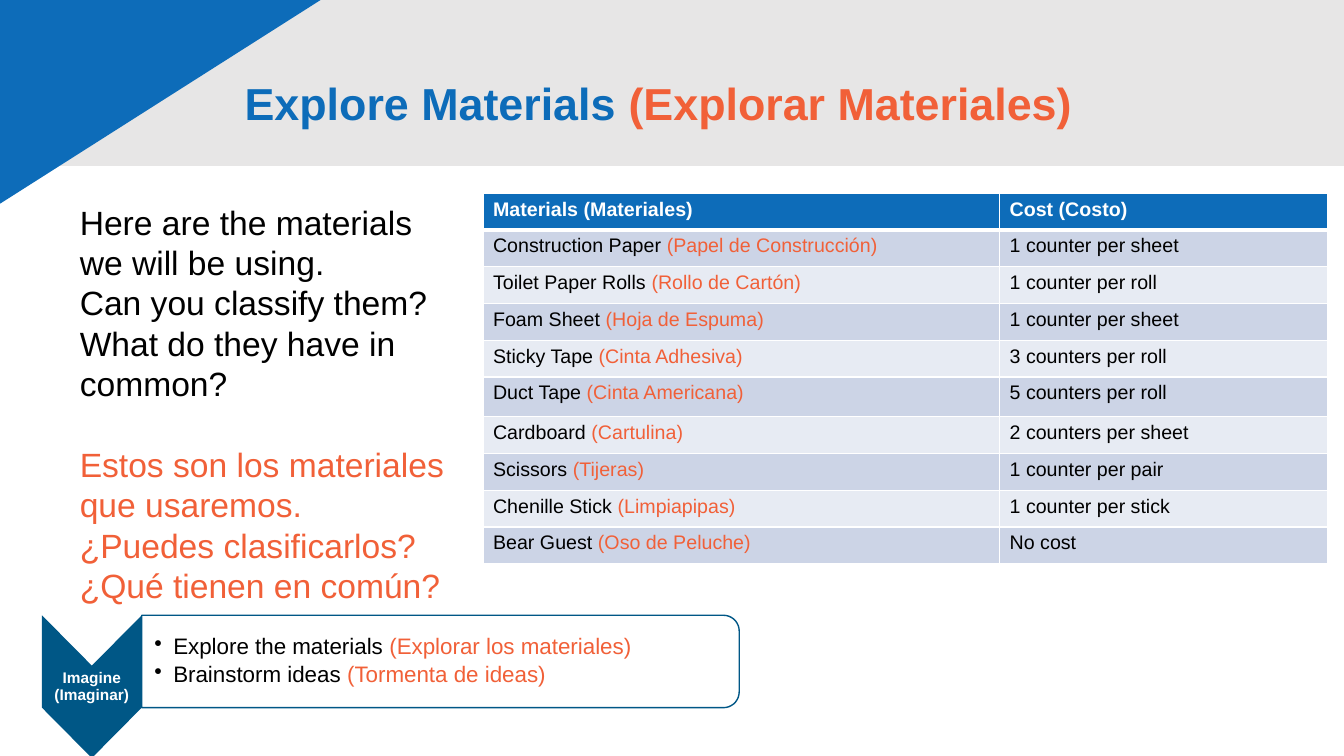
import math

from lxml import etree
from pptx import Presentation
from pptx import util as u
from pptx.dml.color import RGBColor
from pptx.enum import shapes, text
from pptx.oxml import ns

EMU_PER_PX = 9525
FONT = "Arial"
COLOURS = {
    "blue": "0D6CB9",
    "navy": "005786",
    "orange": "F16038",
    "grey": "E7E6E6",
    "odd row": "CCD4E6",
    "even row": "E7EBF3",
    "white": "FFFFFF",
    "black": "000000",
}
MATERIALS = [
    ("Construction Paper", "Papel de Construcción", "1 counter per sheet"),
    ("Toilet Paper Rolls", "Rollo de Cartón", "1 counter per roll"),
    ("Foam Sheet", "Hoja de Espuma", "1 counter per sheet"),
    ("Sticky Tape", "Cinta Adhesiva", "3 counters per roll"),
    ("Duct Tape", "Cinta Americana", "5 counters per roll"),
    ("Cardboard", "Cartulina", "2 counters per sheet"),
    ("Scissors", "Tijeras", "1 counter per pair"),
    ("Chenille Stick", "Limpiapipas", "1 counter per stick"),
    ("Bear Guest", "Oso de Peluche", "No cost"),
]
QUESTIONS = [
    ("Here are the materials we will be using.", "black"),
    ("Can you classify them?", "black"),
    ("What do they have in common?", "black"),
    ("Estos son los materiales que usaremos.", "orange"),
    ("¿Puedes clasificarlos?", "orange"),
    ("¿Qué tienen en común?", "orange"),
]
STEPS = [
    ("Explore the materials", "Explorar los materiales"),
    ("Brainstorm ideas", "Tormenta de ideas"),
]


def px(*lengths):
    return [u.Emu(round(length * EMU_PER_PX)) for length in lengths]


def colour(name):
    return RGBColor.from_string(COLOURS[name])


def write(para, size, *spans, bold=False):
    """Fill a paragraph with (wording, colour name) spans."""
    for wording, name in spans:
        span = para.add_run()
        span.text = wording
        span.font.name = FONT
        span.font.size = u.Pt(size)
        span.font.bold = bold
        span.font.color.rgb = colour(name)


def bilingual(english, spanish, name="black"):
    return (english + " ", name), (f"({spanish})", "orange")


def paint(shape, fill):
    shape.shadow.inherit = False
    shape.fill.solid()
    shape.fill.fore_color.rgb = colour(fill)
    shape.line.fill.background()
    return shape


def add_preset(page, kind, fill, *place):
    return paint(page.shapes.add_shape(kind, *px(*place)), fill)


def add_outline(page, fill, points):
    corners = [px(*point) for point in points]
    builder = page.shapes.build_freeform(*corners[0], scale=1.0)
    builder.add_line_segments(corners[1:], close=True)
    return paint(builder.convert_to_shape(), fill)


def set_frame(shape, margins, anchor):
    frame = shape.text_frame
    frame.word_wrap = True
    frame.vertical_anchor = anchor
    (frame.margin_left, frame.margin_top,
     frame.margin_right, frame.margin_bottom) = px(*margins)
    return frame


def add_text(page, anchor, *place):
    box = page.shapes.add_textbox(*px(*place))
    return set_frame(box, (10, 5, 10, 5), anchor)


def add_banner(page):
    add_preset(page, shapes.MSO_SHAPE.RECTANGLE, "grey", -25, -18, 1305, 176)
    corner = add_preset(page, shapes.MSO_SHAPE.RIGHT_TRIANGLE, "blue",
                        -247, -165, 812, 516)
    corner.rotation = 180
    corner.element.spPr.find(ns.qn("a:xfrm")).set("flipH", "1")


def add_stage(page):
    chevron = add_outline(page, "navy", [
        (135, 586), (135, 674), (87.5, 722), (40, 674), (40, 586), (87.5, 634)])
    frame = set_frame(chevron, (1, 45, 1, 45), text.MSO_ANCHOR.MIDDLE)
    para = frame.paragraphs[0]
    para.alignment = text.PP_ALIGN.CENTER
    para.line_spacing = 0.9
    write(para, 11, ("Imagine (Imaginar)", "white"), bold=True)


def add_steps(page):
    left, top, right, bottom, radius = 135, 586, 704, 674, 15
    arcs = [(right - radius + radius * math.cos(math.radians(angle)),
             middle + radius * math.sin(math.radians(angle)))
            for middle, start in ((top + radius, -90), (bottom - radius, 0))
            for angle in range(start, start + 91, 10)]
    card = add_outline(page, "white", [(left, top), *arcs, (left, bottom)])
    solid = card.element.spPr.find(ns.qn("a:solidFill"))
    etree.SubElement(solid[0], ns.qn("a:alpha"), val="90000")
    card.line.color.rgb = colour("navy")
    card.line.width = u.Pt(1)
    frame = set_frame(card, (12, 5, 5, 5), text.MSO_ANCHOR.MIDDLE)
    for index, step in enumerate(STEPS):
        para = frame.add_paragraph() if index else frame.paragraphs[0]
        indent, = px(18)
        props = para._p.get_or_add_pPr()
        props.set("marL", str(indent))
        props.set("indent", str(-indent))
        etree.SubElement(props, ns.qn("a:buChar"), char="•")
        para.alignment = text.PP_ALIGN.LEFT
        para.line_spacing = 0.9
        para.space_after = u.Pt(3)
        write(para, 16, *bilingual(*step))


def add_questions(page):
    frame = add_text(page, text.MSO_ANCHOR.TOP, 66, 187, 385, 426)
    previous = "black"
    for index, (wording, name) in enumerate(QUESTIONS):
        para = frame.add_paragraph() if index else frame.paragraphs[0]
        if name != previous:
            para.space_before = u.Pt(29)
        write(para, 24, (wording, name))
        previous = name


def add_borders(cell, bottom):
    props = cell._tc.get_or_add_tcPr()
    for side, width in (("L", 1), ("R", 1), ("T", 1), ("B", bottom)):
        line = etree.SubElement(props, ns.qn("a:ln" + side), w=str(u.Pt(width)))
        solid = etree.SubElement(line, ns.qn("a:solidFill"))
        etree.SubElement(solid, ns.qn("a:srgbClr"), val=COLOURS["white"])


def fill_cell(cell, fill, *spans, header=False):
    add_borders(cell, 3 if header else 1)
    cell.fill.solid()
    cell.fill.fore_color.rgb = colour(fill)
    write(cell.text_frame.paragraphs[0], 14, *spans, bold=header)


def add_materials(page):
    count = len(MATERIALS) + 1
    table = page.shapes.add_table(count, 2, *px(460, 184, 804, 35 * count)).table
    table.columns[0].width, table.columns[1].width = px(492, 312)
    for column, heading in enumerate(("Materials (Materiales)", "Cost (Costo)")):
        fill_cell(table.cell(0, column), "blue", (heading, "white"), header=True)
    for row, (english, spanish, cost) in enumerate(MATERIALS, 1):
        fill = "odd row" if row % 2 else "even row"
        fill_cell(table.cell(row, 0), fill, *bilingual(english, spanish))
        fill_cell(table.cell(row, 1), fill, (cost, "black"))
    table.rows[5].height, = px(38)


def add_title(page):
    para = add_text(page, text.MSO_ANCHOR.MIDDLE, 223, 31, 931, 139).paragraphs[0]
    para.line_spacing = 0.9
    write(para, 32, *bilingual("Explore Materials", "Explorar Materiales", "blue"),
          bold=True)


def main():
    deck = Presentation()
    deck.slide_width, deck.slide_height = px(1280, 720)
    page = deck.slides.add_slide(deck.slide_layouts[6])
    add_banner(page)
    add_stage(page)
    add_steps(page)
    add_questions(page)
    add_title(page)
    add_materials(page)
    deck.save("out.pptx")


if __name__ == "__main__":
    main()
